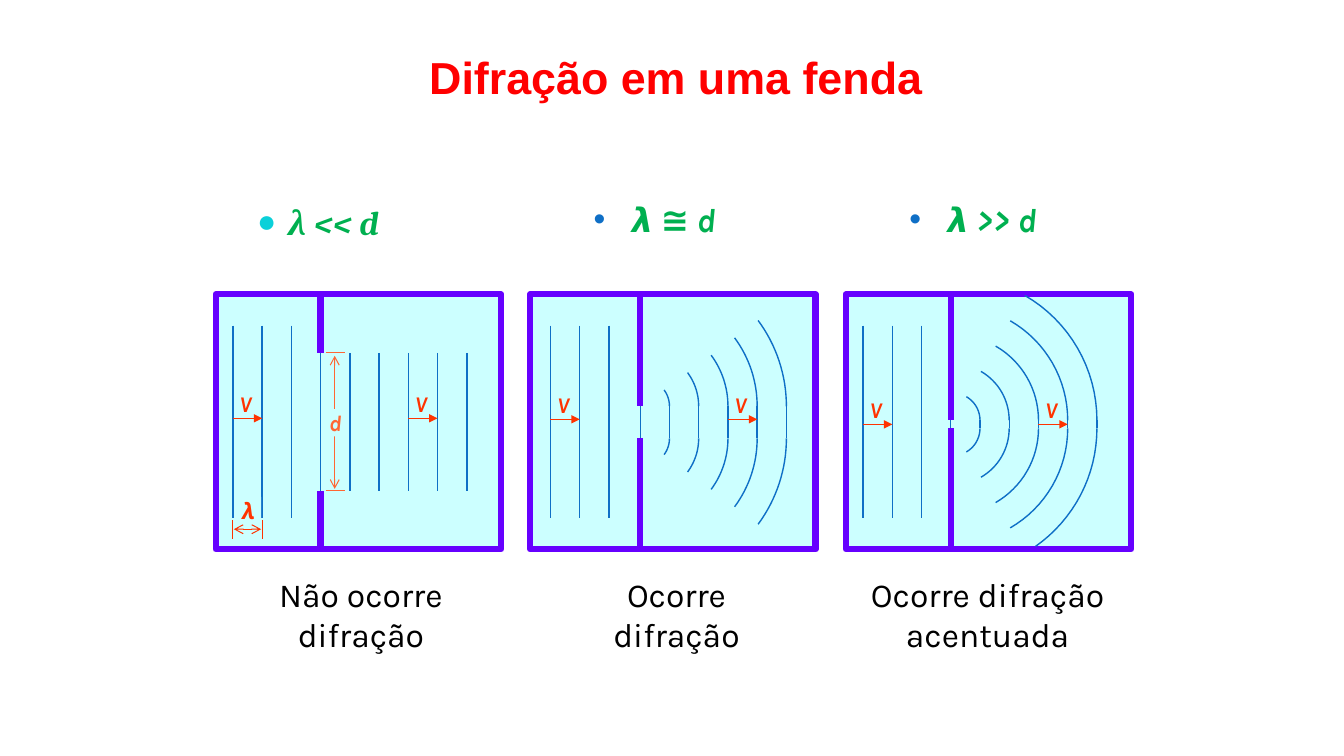
"""Builds a slide on single-slit diffraction, with one wave tank per regime."""
from dataclasses import dataclass
from math import asin, cos, degrees, radians, sin

from lxml.etree import SubElement
from pptx import Presentation
from pptx.dml.color import RGBColor
from pptx.enum.shapes import MSO_CONNECTOR as CONN, MSO_SHAPE as SHAPE
from pptx.enum.text import MSO_ANCHOR as ANCHOR, PP_ALIGN as ALIGN
from pptx.oxml.ns import qn
from pptx.shapes.shapetree import GroupShapes
from pptx.text.text import TextFrame, _Paragraph as Paragraph
from pptx.util import Inches, Pt

COLORS = {
    "title": "FF0000", "formula": "00B050", "caption": "000000",
    "water": "CCFFFF", "wall": "6600FF", "wave": "0F6FC6",
    "speed": "FF3300", "gap": "FF6633", "dot": "0BD0D9",
}
PITCH = 0.29
TOP, BOTTOM, WIDTH = 2.92, 5.45, 2.83
WAVE_TOP, WAVE_BOTTOM = 3.23, 5.14
LABEL_W, LABEL_H = 0.25, 0.27
FIRST_RADIUS, ARC_STEPS = 0.27, 16
ARC_SHIFT, ARC_FLOOR = 0.02, 5.42


@dataclass(frozen=True)
class Box:
    """Place of a text, in inches."""
    x: float
    y: float
    w: float
    h: float


@dataclass(frozen=True)
class Bullet:
    """Look of a list bullet."""
    char: str
    color: str
    indent: float
    size: int = 100


@dataclass(frozen=True)
class Tank:
    """One wave tank with its formula and caption."""
    left: float
    first_wave: float
    slit: float
    gap_top: float
    gap_bottom: float
    speed_y: float
    spread: float
    formula: str
    formula_box: Box
    formula_font: str
    bullet: Bullet
    caption: str
    caption_box: Box


SMALL_DOT = Bullet("•", "wave", 0.38)
TANKS = (
    Tank(2.14, 2.31, 3.18, 3.5, 4.87, 4.15, 0, "λ << d", Box(2.45, 1.95, 1.94, 0.54),
         "Cambria", Bullet("●", "dot", 0.3, 95), "Não ocorre difração", Box(2.58, 5.64, 2, 0.97)),
    Tank(5.26, 5.46, 6.35, 4.03, 4.35, 4.16, 36.5, "λ ≅ d", Box(5.79, 1.92, 1.83, 0.5),
         "Karla", SMALL_DOT, "Ocorre difração", Box(5.71, 5.64, 2, 0.97)),
    Tank(8.39, 8.56, 9.43, 4.17, 4.25, 4.21, 60, "λ >> d", Box(8.92, 1.92, 1.83, 0.5),
         "Karla", SMALL_DOT, "Ocorre difração acentuada", Box(8.39, 5.64, 2.81, 1)),
)


def rgb(name: str) -> RGBColor:
    """Return a named colour."""
    return RGBColor.from_string(COLORS[name])


def lengths(box: Box) -> tuple:
    """Return the box as slide lengths."""
    return Inches(box.x), Inches(box.y), Inches(box.w), Inches(box.h)


def move(s, box: Box) -> None:
    """Put a placeholder at the box."""
    s.left, s.top, s.width, s.height = lengths(box)


def write(tf: TextFrame, text: str, font: str, size: int, color: str,
          bold: bool = False, italic: bool = False) -> Paragraph:
    """Set the text and format its run."""
    tf.text = text
    tf.word_wrap = True
    p = tf.paragraphs[0]
    f = p.runs[0].font
    f.name, f.size, f.bold, f.italic = font, Pt(size), bold, italic
    f.color.rgb = rgb(color)
    return p


def add_bullet(p: Paragraph, bullet: Bullet) -> None:
    """Give the paragraph a bullet with a hanging indent."""
    ppr = p._p.get_or_add_pPr()
    ppr.set("marL", str(Inches(bullet.indent)))
    ppr.set("indent", str(-Inches(bullet.indent)))
    SubElement(SubElement(ppr, qn("a:buClr")), qn("a:srgbClr"), val=COLORS[bullet.color])
    SubElement(ppr, qn("a:buSzPct"), val=str(bullet.size * 1000))
    SubElement(ppr, qn("a:buFont"), typeface="Arial")
    SubElement(ppr, qn("a:buChar"), char=bullet.char)


def line(sp: GroupShapes, x1: float, y1: float, x2: float, y2: float, color: str,
         width: float, head: str = "", tail: str = "") -> None:
    """Draw a straight line with optional arrowheads."""
    c = sp.add_connector(CONN.STRAIGHT, Inches(x1), Inches(y1), Inches(x2), Inches(y2))
    c.line.color.rgb = rgb(color)
    c.line.width = Pt(width)
    sppr = c._element.spPr
    ln = sppr.find(qn("a:ln"))
    for tag, kind in (("a:headEnd", head), ("a:tailEnd", tail)):
        if kind:
            SubElement(ln, qn(tag), type=kind)
    SubElement(sppr, qn("a:effectLst"))


def label(sp: GroupShapes, text: str, x: float, y: float, color: str, filled: bool = False) -> None:
    """Write a one-letter label, on a water-coloured patch if filled."""
    place = lengths(Box(x, y, LABEL_W, LABEL_H))
    if filled:
        s = sp.add_shape(SHAPE.RECTANGLE, *place)
        s.shadow.inherit = False
        s.fill.solid()
        s.fill.fore_color.rgb = rgb("water")
        s.line.fill.background()
    else:
        s = sp.add_textbox(*place)
    tf = s.text_frame
    tf.margin_left = tf.margin_right = tf.margin_top = tf.margin_bottom = 0
    tf.vertical_anchor = ANCHOR.MIDDLE
    write(tf, text, "Karla", 16, color, True, True).alignment = ALIGN.CENTER


def speed(sp: GroupShapes, x: float, y: float) -> None:
    """Draw a speed arrow one wavelength long."""
    line(sp, x, y, x + PITCH, y, "speed", 0.75, tail="triangle")
    label(sp, "V", x, y - 0.28, "speed")


def arc(sp: GroupShapes, x: float, y: float, radius: float, angle: float, side: int) -> None:
    """Draw a wave arc about a centre, above it for side -1 and below for 1."""
    if side > 0:
        angle = min(angle, degrees(asin(min(1, (ARC_FLOOR - y) / radius))))
    turns = [radians(angle * (1 - i / ARC_STEPS)) for i in range(ARC_STEPS + 1)]
    points = [(Inches(x + radius * cos(t)), Inches(y + side * radius * sin(t))) for t in turns]
    fb = sp.build_freeform(Inches(x), Inches(y))
    fb.move_to(*points[0])
    fb.add_line_segments(points[1:], close=False)
    s = fb.convert_to_shape()
    s.shadow.inherit = False
    s.fill.background()
    s.line.color.rgb = rgb("wave")
    s.line.width = Pt(1)


def draw_tank(sp: GroupShapes, tank: Tank) -> None:
    """Draw the tank, its barrier, its waves and its speed arrows."""
    s = sp.add_shape(SHAPE.RECTANGLE, *lengths(Box(tank.left, TOP, WIDTH, BOTTOM - TOP)))
    s.shadow.inherit = False
    s.fill.solid()
    s.fill.fore_color.rgb = rgb("water")
    s.line.color.rgb = rgb("wall")
    s.line.width = Pt(4.5)
    for y1, y2 in ((TOP, tank.gap_top), (tank.gap_bottom, BOTTOM)):
        line(sp, tank.slit, y1, tank.slit, y2, "wall", 4.5)
    for i in range(3):
        x = tank.first_wave + i * PITCH
        line(sp, x, WAVE_TOP, x, WAVE_BOTTOM, "wave", 1)
    for i in range(6):
        x = tank.slit + i * PITCH
        line(sp, x, tank.gap_top, x, tank.gap_bottom, "wave", 1)
    if tank.spread:
        for side, y in ((-1, tank.gap_top), (1, tank.gap_bottom)):
            for i in range(5):
                arc(sp, tank.slit + ARC_SHIFT, y, FIRST_RADIUS + i * PITCH, tank.spread, side)
    for x in (tank.first_wave, tank.slit + 3 * PITCH):
        speed(sp, x, tank.speed_y)


def draw_measures(sp: GroupShapes, tank: Tank) -> None:
    """Mark the slit width and the wavelength."""
    x = tank.slit + 0.14
    for y in (tank.gap_top, tank.gap_bottom):
        line(sp, x - 0.09, y, x + 0.1, y, "gap", 0.75)
    line(sp, x, tank.gap_top + 0.03, x, tank.gap_bottom - 0.02, "gap", 0.75, "arrow", "arrow")
    label(sp, "d", x - 0.12, 4.06, "gap", True)
    x1, x2 = tank.first_wave, tank.first_wave + PITCH
    for x in (x1, x2):
        line(sp, x, 5.16, x, 5.35, "speed", 0.75)
    line(sp, x2 - 0.01, 5.25, x1 + 0.01, 5.25, "speed", 0.75, "arrow", "arrow")
    label(sp, "λ", x1 + 0.03, 4.93, "speed", True)


def main() -> None:
    """Build and save the slide."""
    prs = Presentation()
    prs.slide_width, prs.slide_height = Inches(13.33), Inches(7.5)
    slide = prs.slides.add_slide(prs.slide_layouts[1])
    title, body = slide.placeholders
    move(title, Box(0.04, 0.38, 13.33, 0.65))
    tf = title.text_frame
    tf.margin_left = tf.margin_right = tf.margin_bottom = 0
    tf.vertical_anchor = ANCHOR.BOTTOM
    p = write(tf, "Difração em uma fenda", "Arial", 32, "title", True)
    p.alignment, p.line_spacing = ALIGN.CENTER, 1.5
    move(body, TANKS[0].formula_box)
    for i, tank in enumerate(TANKS):
        s = slide.shapes.add_textbox(*lengths(tank.formula_box)) if i else body
        p = write(s.text_frame, tank.formula, tank.formula_font, 24, "formula", True, True)
        add_bullet(p, tank.bullet)
        draw_tank(slide.shapes.add_group_shape().shapes, tank)
        s = slide.shapes.add_textbox(*lengths(tank.caption_box))
        write(s.text_frame, tank.caption, "Karla", 24, "caption").alignment = ALIGN.CENTER
    draw_measures(slide.shapes.add_group_shape().shapes, TANKS[0])
    prs.save("out.pptx")


if __name__ == "__main__":
    main()
